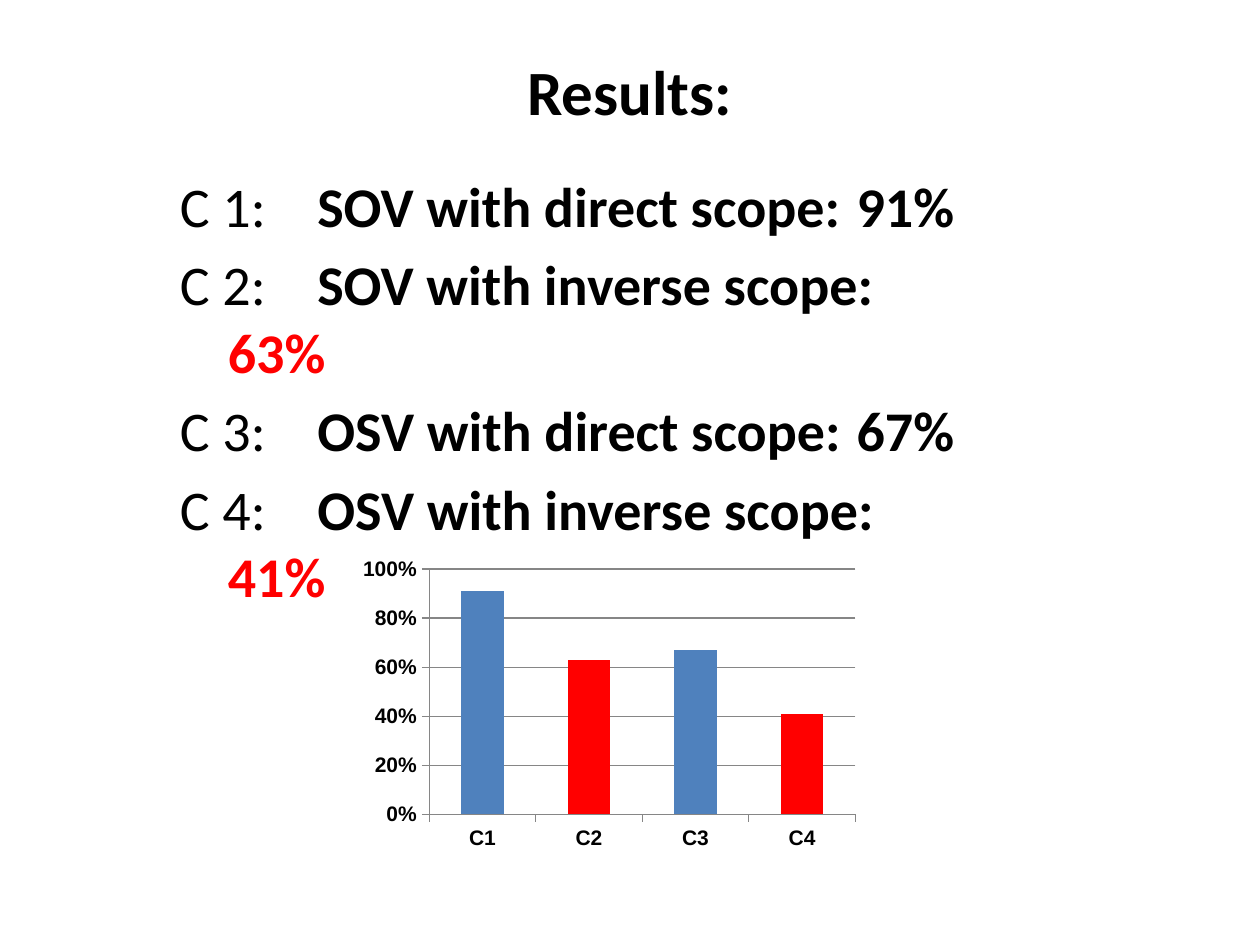
"""Build the results slide: four scope conditions and their column chart."""
from pptx import Presentation
from pptx.chart.data import CategoryChartData
from pptx.dml.color import RGBColor as RGB
from pptx.enum.chart import XL_CHART_TYPE as CT, XL_TICK_MARK as TM
from pptx.enum.text import MSO_ANCHOR as MA, PP_ALIGN as PA
from pptx.oxml import parse_xml
from pptx.oxml.ns import nsdecls
from pptx.util import Inches, Pt

THEME = {
    "text": RGB(0, 0, 0), "accent": RGB(0xFF, 0, 0),
    "bar": RGB(0x4F, 0x81, 0xBD), "line": RGB(0x86, 0x86, 0x86),
    "font": "Calibri", "chart_font": "Arial",
    "title": Pt(36), "body": Pt(32), "axis": Pt(12), "gap": Pt(6.4),
}
TABS = (0.38, 1.09, 5.37)
RESULTS = [
    ("1", "SOV with direct scope:", 0.91),
    ("2", "SOV with inverse scope:", 0.63),
    ("3", "OSV with direct scope:", 0.67),
    ("4", "OSV with inverse scope:", 0.41),
]

prs = Presentation()
prs.slide_width, prs.slide_height = Inches(10), Inches(7.5)
W, H = prs.slide_width, prs.slide_height
s = prs.slides.add_slide(prs.slide_layouts[6])


def add_text(left, top, width, height, anchor):
    tf = s.shapes.add_textbox(*map(int, (left * W, top * H, width * W, height * H))).text_frame
    tf.word_wrap = True
    tf.vertical_anchor = anchor
    return tf


def add_run(p, text, size, bold=True, color="text"):
    r = p.add_run()
    r.text = text
    for name, value in {"name": THEME["font"], "size": THEME[size], "bold": bold}.items():
        setattr(r.font, name, value)
    r.font.color.rgb = THEME[color]


p = add_text(0.05, -0.004, 0.9, 0.2, MA.MIDDLE).paragraphs[0]
p.alignment = PA.CENTER
add_run(p, "Results:", "title")

tf = add_text(0.133, 0.175, 0.733, 0.4, MA.TOP)
stops = "".join(f'<a:tab pos="{Inches(x)}" algn="l"/>' for x in TABS)
for i, (number, label, share) in enumerate(RESULTS):
    p = tf.add_paragraph() if i else tf.paragraphs[0]
    p.space_before = THEME["gap"]
    p._p.get_or_add_pPr().append(parse_xml(f'<a:tabLst {nsdecls("a")}>{stops}</a:tabLst>'))
    add_run(p, f"C {number}:\t", "body", False)
    add_run(p, label, "body")
    if "inverse" in label:
        p.add_line_break()
    add_run(p, f"\t{share:.0%}", "body", color="accent" if "inverse" in label else "text")

data = CategoryChartData(number_format="0%")
data.categories = [f"C{number}" for number, _, _ in RESULTS]
data.add_series("Series 1", [share for _, _, share in RESULTS])
box = [int(v) for v in (0.28 * W, 0.584 * H, 0.407 * W, 0.321 * H)]
chart = s.shapes.add_chart(CT.COLUMN_CLUSTERED, *box, data).chart
chart.has_legend = chart.has_title = False

plot = chart.plots[0]
plot.gap_width, plot.vary_by_categories = 150, False
series = plot.series[0]
series.invert_if_negative = False
series.format.fill.solid()
series.format.fill.fore_color.rgb = THEME["bar"]
for i, (_, label, _) in enumerate(RESULTS):
    if "inverse" in label:
        fill = series.points[i].format.fill
        fill.solid()
        fill.fore_color.rgb = THEME["accent"]

value = chart.value_axis
for name, setting in {"minimum_scale": 0, "maximum_scale": 1, "major_unit": 0.2,
                      "has_major_gridlines": True}.items():
    setattr(value, name, setting)
value.tick_labels.number_format = "0%"
value.tick_labels.number_format_is_linked = False
for axis in (chart.category_axis, value):
    axis.major_tick_mark, axis.minor_tick_mark = TM.OUTSIDE, TM.NONE
    font = axis.tick_labels.font
    for name, setting in {"name": THEME["chart_font"], "size": THEME["axis"], "bold": True}.items():
        setattr(font, name, setting)
    font.color.rgb = THEME["text"]
for part in (chart.category_axis, value, value.major_gridlines):
    part.format.line.color.rgb = THEME["line"]
    part.format.line.width = Pt(0.75)

prs.save("out.pptx")
